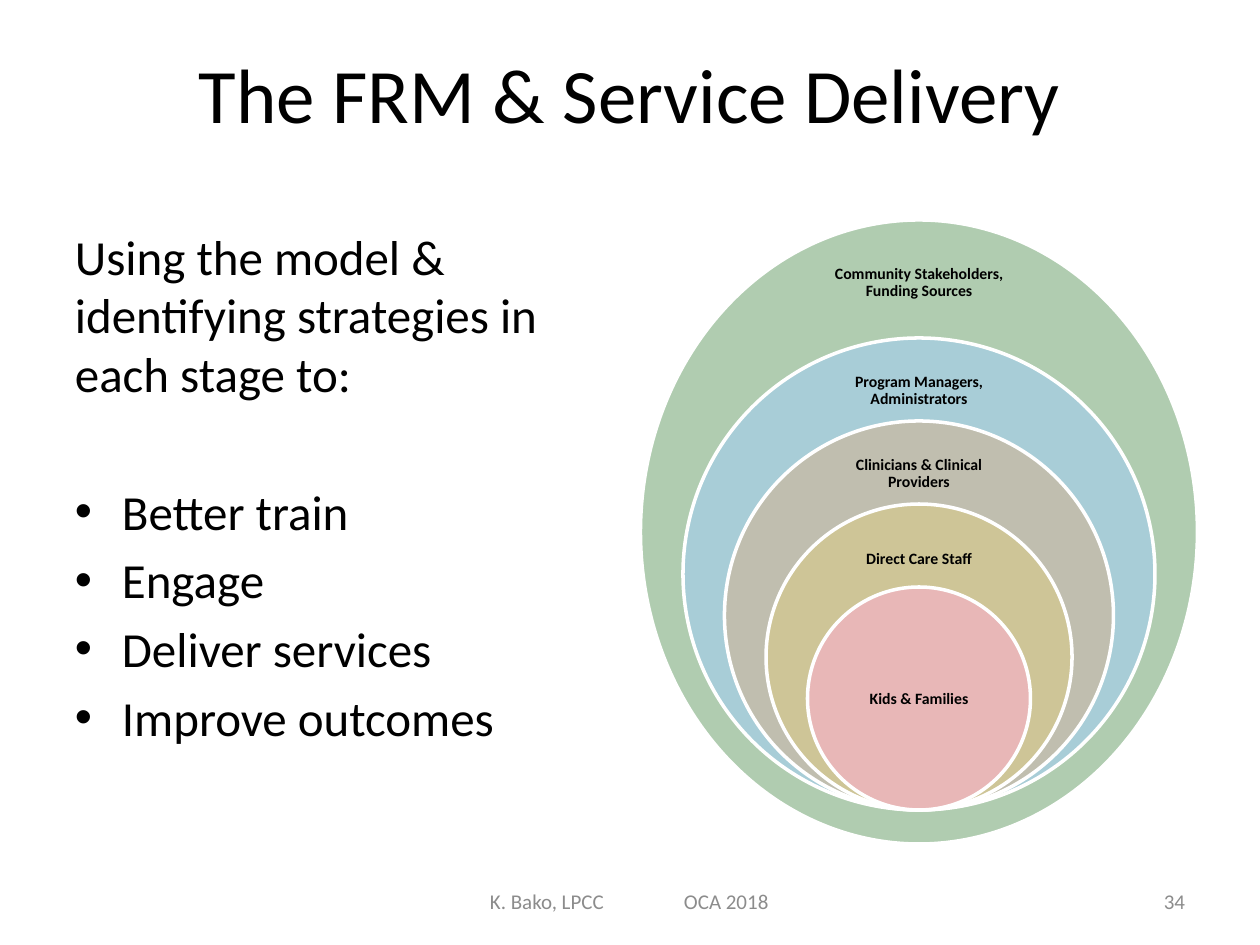
from lxml.etree import SubElement
from pptx import Presentation
from pptx.dml.color import RGBColor
from pptx.enum.shapes import MSO_SHAPE
from pptx.enum.text import MSO_ANCHOR, PP_ALIGN
from pptx.oxml.ns import qn
from pptx.util import Emu, Pt

PX_PER_INCH = 126
FONT = "Calibri"
COLORS = {
    "text": "000000",
    "footer": "8C8C8C",
    "outline": "FFFFFF",
    "stakeholders": "B0CCB0",
    "managers": "A8CDD7",
    "clinicians": "C0BEAF",
    "staff": "CEC597",
    "families": "E8B7B7",
}
CENTER_X = 919
CIRCLES_BOTTOM = 810
LARGEST_CIRCLE = 472
CIRCLE_STEP = 83
CIRCLES = [
    ("managers", "Program Managers, Administrators", 364, 204, 54),
    ("clinicians", "Clinicians & Clinical Providers", 447, 202, 54),
    ("staff", "Direct Care Staff", 532, 165, 55),
    ("families", "Kids & Families", 644, 158, 111),
]
GOALS = ["Better train", "Engage", "Deliver services", "Improve outcomes"]


def px(value):
    return Emu(round(value * 914400 / PX_PER_INCH))


def color(name):
    return RGBColor.from_string(COLORS[name])


def add_text_box(slide, left, top, width, height,
                 anchor=MSO_ANCHOR.MIDDLE, inset=(12, 6)):
    shape = slide.shapes.add_textbox(px(left), px(top), px(width), px(height))
    frame = shape.text_frame
    frame.word_wrap = True
    frame.vertical_anchor = anchor
    frame.margin_left = frame.margin_right = px(inset[0])
    frame.margin_top = frame.margin_bottom = px(inset[1])
    return frame


def write(paragraph, text, size, align=PP_ALIGN.LEFT, fill="text", bold=False):
    paragraph.alignment = align
    run = paragraph.add_run()
    run.text = text
    run.font.name = FONT
    run.font.size = Pt(size)
    run.font.bold = bold
    run.font.color.rgb = color(fill)


def add_bullet(paragraph, indent):
    properties = paragraph._p.get_or_add_pPr()
    properties.set("marL", str(px(indent)))
    properties.set("indent", str(-px(indent)))
    SubElement(properties, qn("a:buFont"), typeface="Arial")
    SubElement(properties, qn("a:buChar"), char="•")


def add_tab_stop(paragraph, position):
    tabs = SubElement(paragraph._p.get_or_add_pPr(), qn("a:tabLst"))
    SubElement(tabs, qn("a:tab"), pos=str(px(position)), algn="l")


def add_ellipse(slide, fill, top, width, height):
    shape = slide.shapes.add_shape(
        MSO_SHAPE.OVAL, px(CENTER_X - width / 2), px(top), px(width), px(height))
    shape.shadow.inherit = False
    shape.fill.solid()
    shape.fill.fore_color.rgb = color(fill)
    shape.line.color.rgb = color("outline")
    shape.line.width = Pt(2)


def add_label(slide, text, top, width, height):
    frame = add_text_box(slide, CENTER_X - width / 2, top, width, height, inset=(9, 9))
    paragraph = frame.paragraphs[0]
    paragraph.line_spacing = 0.9
    write(paragraph, text, 9, PP_ALIGN.CENTER, bold=True)


def add_title(slide):
    frame = add_text_box(slide, 63, 38, 1134, 110)
    write(frame.paragraphs[0], "The FRM & Service Delivery", 44, PP_ALIGN.CENTER)


def add_body(slide):
    frame = add_text_box(slide, 63, 220, 557, 624, MSO_ANCHOR.TOP)
    introduction = frame.paragraphs[0]
    introduction.space_before = Pt(5.6)
    write(introduction, "Using the model & identifying strategies in each stage to:", 28)
    for index, goal in enumerate(GOALS):
        paragraph = frame.add_paragraph()
        paragraph.space_before = Pt(5.6 if index else 45)
        add_bullet(paragraph, 47)
        write(paragraph, goal, 28)


def add_nested_circles(slide):
    add_ellipse(slide, "stakeholders", 220, 557, 624)
    add_label(slide, "Community Stakeholders, Funding Sources", 252, 209, 62)
    for index, (fill, text, *label_box) in enumerate(CIRCLES):
        diameter = LARGEST_CIRCLE - index * CIRCLE_STEP
        add_ellipse(slide, fill, CIRCLES_BOTTOM - diameter, diameter, diameter)
        add_label(slide, text, *label_box)


def add_footer(slide):
    credit = add_text_box(slide, 431, 876, 399, 50, inset=(59, 6)).paragraphs[0]
    add_tab_stop(credit, 194)
    write(credit, "K. Bako, LPCC\tOCA 2018", 12, fill="footer")
    number = add_text_box(slide, 903, 876, 294, 50).paragraphs[0]
    write(number, "34", 12, PP_ALIGN.RIGHT, "footer")


def main():
    presentation = Presentation()
    presentation.slide_width = px(1260)
    presentation.slide_height = px(945)
    slide = presentation.slides.add_slide(presentation.slide_layouts[6])
    add_title(slide)
    add_body(slide)
    add_footer(slide)
    add_nested_circles(slide)
    presentation.save("out.pptx")


if __name__ == "__main__":
    main()
